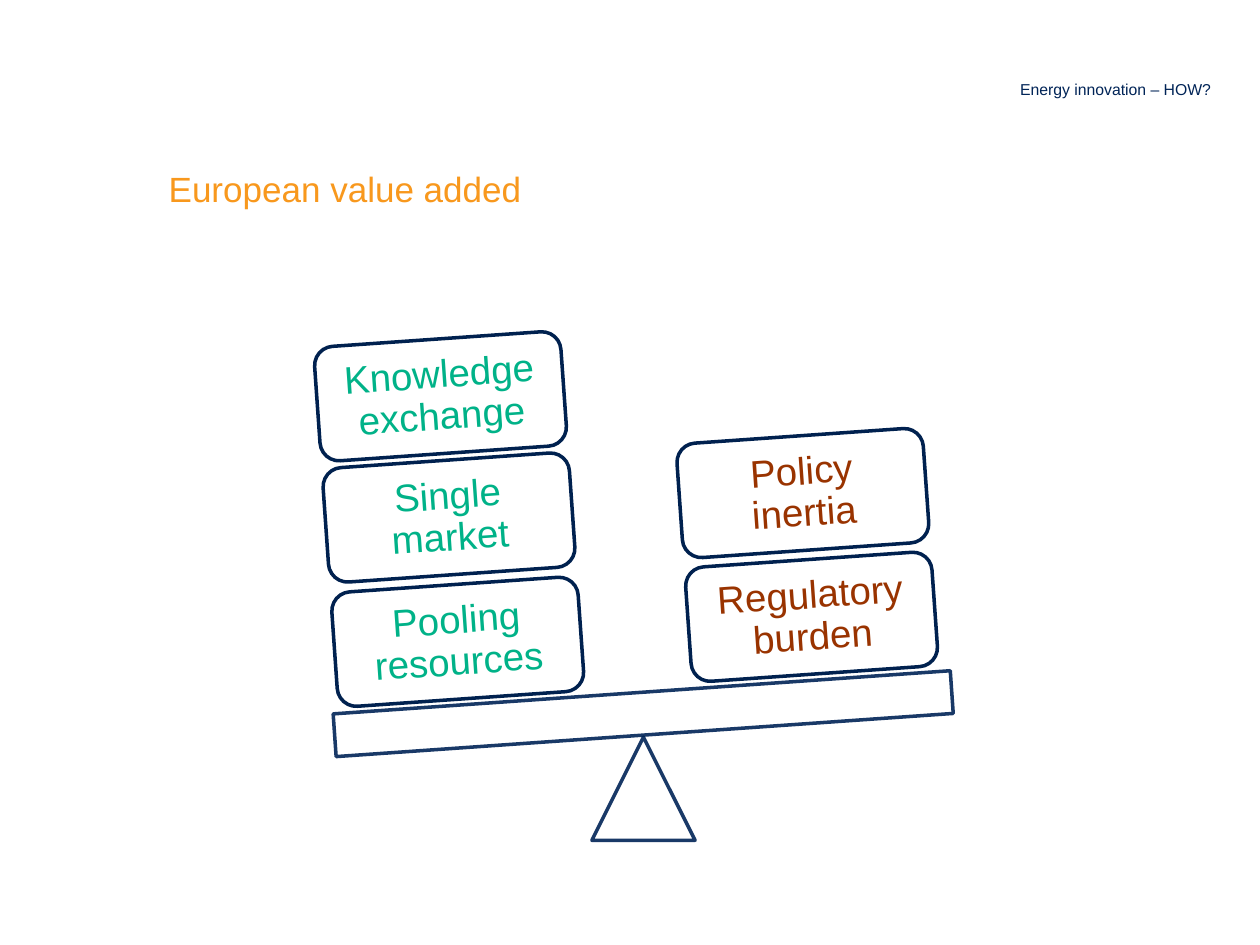
import math

from lxml import etree
from pptx import Presentation
from pptx.dml.color import RGBColor
from pptx.enum import shapes, text
from pptx.oxml import ns
from pptx.util import Pt

NAVY, DARK_NAVY, WHITE = "002457", "00214F", "FFFFFF"
GREEN, BROWN, ORANGE = "00B288", "993300", "F8981D"
TILT = 4  # degrees, anticlockwise


def rgb(value):
    return RGBColor.from_string(value)


def set_opacity(fill_parent, percent):
    """Add an alpha value to the solid colour below an element."""
    color = fill_parent.find(ns.qn("a:solidFill"))[0]
    etree.SubElement(color, ns.qn("a:alpha")).set("val", str(percent * 1000))


class Board:
    """Style and current slide."""
    font = "Arial"
    line_width = Pt(2)
    block_size = (141.1, 65.5)

    def __init__(self, slide):
        self.slide = slide

    def outline(self, kind, left, top, width, height, color, rotation=0):
        shape = self.slide.shapes.add_shape(
            kind, Pt(left), Pt(top), Pt(width), Pt(height))
        shape.shadow.inherit = False
        shape.fill.solid()
        shape.fill.fore_color.rgb = rgb(WHITE)
        shape.line.color.rgb = rgb(color)
        shape.line.width = self.line_width
        shape.rotation = rotation
        return shape

    def seesaw_part(self, kind, left, top, width, height, rotation=0):
        shape = self.outline(kind, left, top, width, height, NAVY, rotation)
        properties = shape._element.spPr
        set_opacity(properties, 90)
        set_opacity(properties.find(ns.qn("a:ln")), 90)

    def add_words(self, frame, words, size, color, align, anchor, insets):
        frame.word_wrap = True
        frame.vertical_anchor = anchor
        (frame.margin_left, frame.margin_top,
         frame.margin_right, frame.margin_bottom) = map(Pt, insets)
        paragraph = frame.paragraphs[0]
        paragraph.alignment = align
        run = paragraph.add_run()
        run.text = words
        run.font.name = self.font
        run.font.size = Pt(size)
        run.font.color.rgb = rgb(color)
        return paragraph

    def block(self, left, top, words, color):
        shape = self.outline(shapes.MSO_SHAPE.ROUNDED_RECTANGLE, left, top,
                             *self.block_size, DARK_NAVY, -TILT)
        paragraph = self.add_words(shape.text_frame, words, 22, color,
                                   text.PP_ALIGN.CENTER, text.MSO_ANCHOR.MIDDLE,
                                   [6.5] * 4)
        paragraph.line_spacing = 0.9

    def stack(self, left, color, blocks):
        """Pile blocks upwards, square to the tilted beam."""
        base = blocks[0][0]
        for top, words in blocks:
            shift = (base - top) * math.tan(math.radians(TILT))
            self.block(left - shift, top, words, color)

    def heading(self, left, top, width, height, *style):
        box = self.slide.shapes.add_textbox(
            Pt(left), Pt(top), Pt(width), Pt(height))
        self.add_words(box.text_frame, *style)


def main():
    deck = Presentation()
    deck.slide_width, deck.slide_height = Pt(720), Pt(540)
    board = Board(deck.slides.add_slide(deck.slide_layouts[6]))

    board.seesaw_part(shapes.MSO_SHAPE.ISOSCELES_TRIANGLE, 338.2, 421.2, 59, 59)
    board.seesaw_part(shapes.MSO_SHAPE.RECTANGLE, 190.8, 395.6, 353.5, 24.5, -TILT)
    board.stack(191, GREEN, [(334, "Pooling resources"),
                             (263, "Single market"),
                             (193.7, "Knowledge exchange")])
    board.stack(393.2, BROWN, [(319.7, "Regulatory burden"),
                               (249, "Policy inertia")])

    board.heading(89.3, 87.1, 529.2, 36.7, "European value added", 20, ORANGE,
                  text.PP_ALIGN.LEFT, text.MSO_ANCHOR.TOP, (7.2, 8.6, 7.2, 3.6))
    board.heading(127.4, 20.2, 571.7, 39.6, "Energy innovation – HOW?", 9, NAVY,
                  text.PP_ALIGN.RIGHT, text.MSO_ANCHOR.BOTTOM, (7.2, 3.6, 7.2, 3.6))
    deck.save("out.pptx")


if __name__ == "__main__":
    main()
